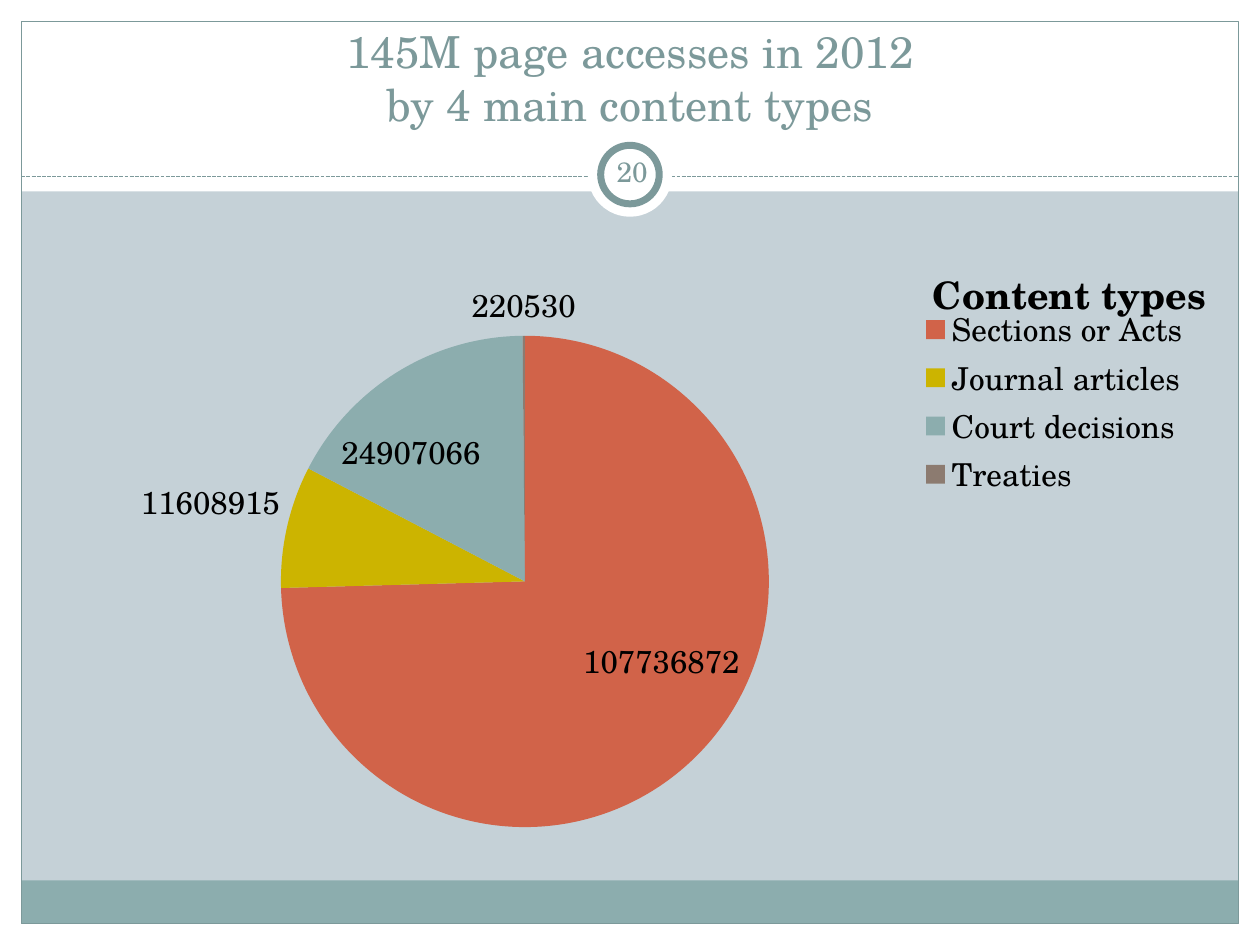
from dataclasses import dataclass

from lxml import etree
from pptx import Presentation
from pptx.chart.data import CategoryChartData
from pptx.dml.color import RGBColor
from pptx.enum import chart as ch, dml, shapes, text
from pptx.oxml.ns import qn
from pptx.util import Cm, Pt


@dataclass(frozen=True)
class Theme:
    font: str = "TeX Gyre Schola"
    background: str = "C5D1D7"
    paper: str = "FFFFFF"
    accent: str = "7C999A"
    footer: str = "8CADAE"
    ink: str = "000000"
    title: float = 25.2
    number: float = 16
    chart_title: float = 21.6
    label: float = 18
    hairline: float = 0.75
    ring: float = 4


@dataclass(frozen=True)
class Box:
    """Left, top, width and height in centimetres."""
    x: float
    y: float
    w: float
    h: float

    def lengths(self) -> list[Cm]:
        return [Cm(v) for v in (self.x, self.y, self.w, self.h)]


@dataclass(frozen=True)
class Panel:
    box: Box
    fill: str | None = None
    line: str | None = None
    weight: float = 0
    kind: shapes.MSO_SHAPE = shapes.MSO_SHAPE.RECTANGLE


@dataclass(frozen=True)
class ContentType:
    name: str
    accesses: int
    color: str


T = Theme()
WIDTH, HEIGHT, MARGIN = 25.4, 19.05, 0.43
HEADER, RULE_Y = 3.86, 3.56
INNER_W = WIDTH - 2 * MARGIN
OVAL = shapes.MSO_SHAPE.OVAL

BACKDROP = [
    Panel(Box(0, HEIGHT - MARGIN, WIDTH, MARGIN), T.paper),
    Panel(Box(0, 0, WIDTH, HEADER), T.paper),
    Panel(Box(0, 0, MARGIN, HEIGHT), T.paper),
    Panel(Box(WIDTH - MARGIN, 0, MARGIN, HEIGHT), T.paper),
    Panel(Box(MARGIN, 17.75, INNER_W, 0.87), T.footer),
    Panel(Box(MARGIN, MARGIN, INNER_W, HEIGHT - 2 * MARGIN),
          line=T.accent, weight=T.hairline),
]
BADGE = [
    Panel(Box(11.85, 2.67, 1.7, 1.7), T.paper, kind=OVAL),
    Panel(Box(12.11, 2.93, 1.18, 1.18), T.paper, T.accent, T.ring, OVAL),
]
CONTENT_TYPES = [
    ContentType("Sections or Acts", 107736872, "D16349"),
    ContentType("Journal articles", 11608915, "CCB400"),
    ContentType("Court decisions", 24907066, "8CADAE"),
    ContentType("Treaties", 220530, "8C7B70"),
]


def rgb(value: str) -> RGBColor:
    return RGBColor.from_string(value)


def style_font(font, size: float, color: str, bold: bool = False) -> None:
    font.name, font.size, font.bold = T.font, Pt(size), bold
    font.color.rgb = rgb(color)


def add_panel(slide, panel: Panel) -> None:
    sp = slide.shapes.add_shape(panel.kind, *panel.box.lengths())
    sp.shadow.inherit = False
    if panel.fill:
        sp.fill.solid()
        sp.fill.fore_color.rgb = rgb(panel.fill)
    else:
        sp.fill.background()
    if panel.line:
        sp.line.color.rgb = rgb(panel.line)
        sp.line.width = Pt(panel.weight)
    else:
        sp.line.fill.background()


def add_rule(slide) -> None:
    """Dashed line under the heading."""
    line = slide.shapes.add_connector(
        shapes.MSO_CONNECTOR.STRAIGHT,
        Cm(MARGIN), Cm(RULE_Y), Cm(WIDTH - MARGIN), Cm(RULE_Y))
    line.line.color.rgb = rgb(T.accent)
    line.line.width = Pt(T.hairline)
    line.line.dash_style = dml.MSO_LINE.SQUARE_DOT
    etree.SubElement(line._element.spPr, qn("a:effectLst"))


def add_text(slide, content: str, box: Box, *, size: float, color: str,
             anchor: text.MSO_ANCHOR, inset: float) -> None:
    tf = slide.shapes.add_textbox(*box.lengths()).text_frame
    tf.word_wrap = True
    tf.vertical_anchor = anchor
    tf.margin_left = tf.margin_right = Cm(inset)
    tf.margin_top = tf.margin_bottom = Cm(0.13)
    p = tf.paragraphs[0]
    p.alignment = text.PP_ALIGN.CENTER
    for i, line in enumerate(content.split("\n")):
        if i:
            p.add_line_break()
        r = p.add_run()
        r.text = line
        style_font(r.font, size, color)


def set_layout(parent, index: int, inner: bool = False, **fractions: float) -> None:
    """Place a chart part by fractions (x, y, w, h) of the chart area."""
    for old in parent.findall(qn("c:layout")):
        parent.remove(old)
    layout = etree.Element(qn("c:layout"))
    manual = etree.SubElement(layout, qn("c:manualLayout"))
    settings = {"layoutTarget": "inner"} if inner else {}
    settings |= {"xMode": "edge", "yMode": "edge"} | fractions
    for tag, value in settings.items():
        etree.SubElement(manual, qn(f"c:{tag}")).set("val", str(value))
    parent.insert(index, layout)


def add_pie(slide, title: str, items: list[ContentType], box: Box) -> None:
    data = CategoryChartData(number_format="General")
    data.categories = [item.name for item in items]
    data.add_series(title, [item.accesses for item in items])
    chart = slide.shapes.add_chart(
        ch.XL_CHART_TYPE.PIE, *box.lengths(), data).chart
    style_font(chart.font, T.label, T.ink)

    chart.has_title = True
    r = chart.chart_title.text_frame.paragraphs[0].add_run()
    r.text = title
    style_font(r.font, T.chart_title, T.ink, bold=True)
    set_layout(chart.chart_title._element, 1, x=0.76, y=0.07)

    chart.has_legend = True
    chart.legend.position = ch.XL_LEGEND_POSITION.RIGHT
    chart.legend.include_in_layout = False
    style_font(chart.legend.font, T.label, T.ink)
    set_layout(chart.legend._element, 1, x=0.75, y=0.15, w=0.24, h=0.31)

    plot = chart.plots[0]
    plot.vary_by_categories = True
    set_layout(plot._element.getparent(), 0, inner=True,
               x=0.07, y=0.2, w=0.69, h=0.78)
    plot.has_data_labels = True
    labels = plot.data_labels
    labels.show_value = True
    labels.show_percentage = False
    labels.position = ch.XL_LABEL_POSITION.BEST_FIT
    style_font(labels.font, T.label, T.ink)
    for i, item in enumerate(items):
        fmt = plot.series[0].points[i].format
        fmt.fill.solid()
        fmt.fill.fore_color.rgb = rgb(item.color)
        fmt.line.fill.background()


def main() -> None:
    prs = Presentation()
    prs.slide_width, prs.slide_height = Cm(WIDTH), Cm(HEIGHT)
    slide = prs.slides.add_slide(prs.slide_layouts[6])
    slide.background.fill.solid()
    slide.background.fill.fore_color.rgb = rgb(T.background)

    for panel in BACKDROP:
        add_panel(slide, panel)
    add_rule(slide)
    for panel in BADGE:
        add_panel(slide, panel)
    add_text(slide, "145M page accesses in 2012\nby 4 main content types",
             Box(0.85, 0.64, 23.7, 2.12), size=T.title, color=T.accent,
             anchor=text.MSO_ANCHOR.BOTTOM, inset=0.25)
    add_text(slide, "20", Box(12.11, 2.85, 1.27, 1.22), size=T.number,
             color=T.accent, anchor=text.MSO_ANCHOR.MIDDLE, inset=0.13)
    add_pie(slide, "Content types", CONTENT_TYPES, Box(0.85, 4.23, 23.62, 12.7))
    prs.save("out.pptx")


if __name__ == "__main__":
    main()
